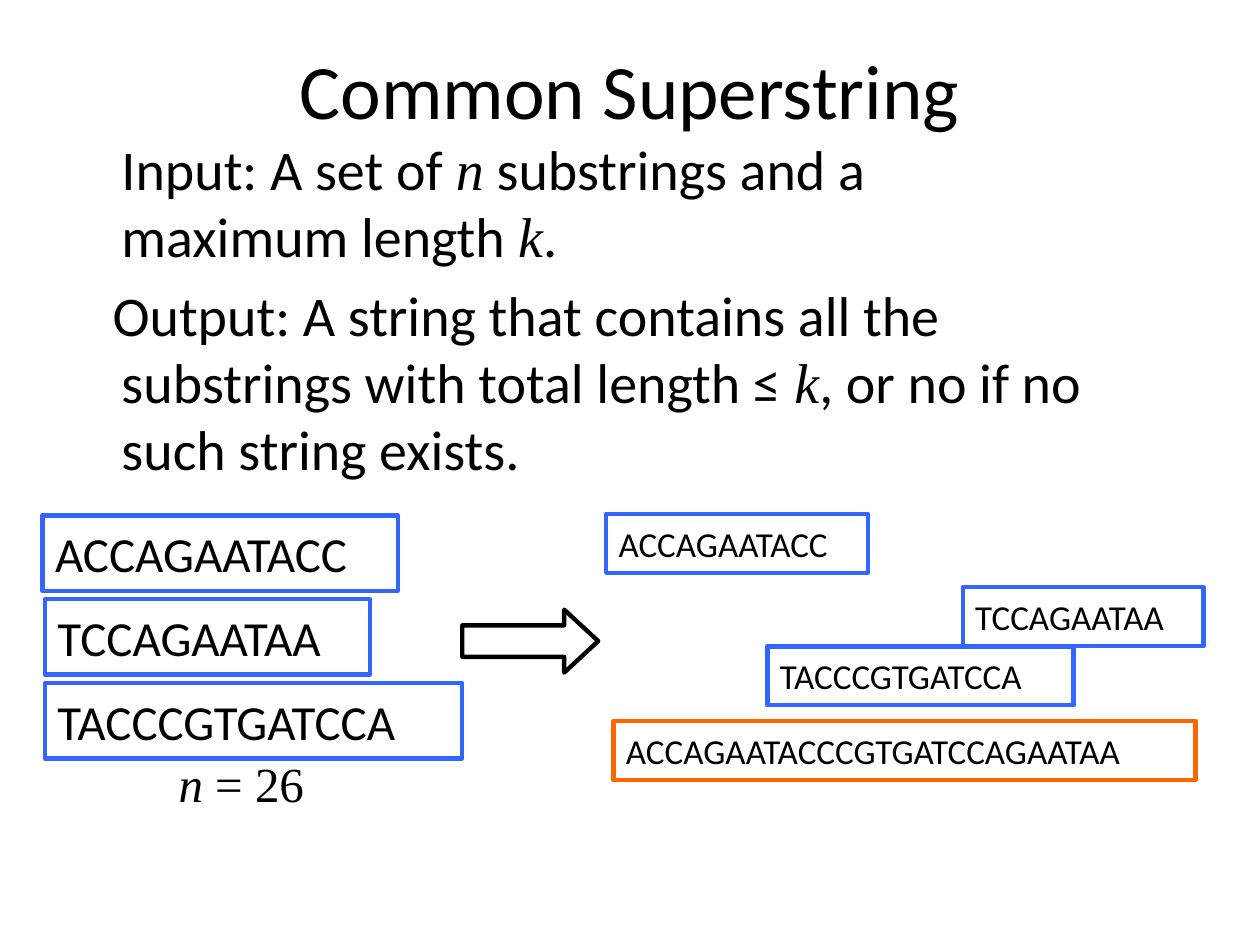
from pptx import Presentation
from pptx.dml.color import RGBColor
from pptx.enum.shapes import MSO_SHAPE
from pptx.enum.text import MSO_ANCHOR, PP_ALIGN
from pptx.util import Cm, Pt

RECTANGLE = MSO_SHAPE.RECTANGLE
RIGHT_ARROW = MSO_SHAPE.RIGHT_ARROW
TOP = MSO_ANCHOR.TOP
MIDDLE = MSO_ANCHOR.MIDDLE
LEFT = PP_ALIGN.LEFT
CENTER = PP_ALIGN.CENTER

BLACK = RGBColor(0x00, 0x00, 0x00)
BLUE = RGBColor(0x33, 0x66, 0xFF)
ORANGE = RGBColor(0xFF, 0x66, 0x00)
SANS = "Calibri"
SERIF = "Times New Roman"


def style_paragraph(paragraph, size, font_name=SANS, alignment=LEFT):
    paragraph.alignment = alignment
    paragraph.font.size = Pt(size)
    paragraph.font.name = font_name
    paragraph.font.color.rgb = BLACK


def add_text_frame(slide, left, top, width, height, anchor=TOP):
    text_box = slide.shapes.add_textbox(Cm(left), Cm(top), Cm(width), Cm(height))
    text_frame = text_box.text_frame
    text_frame.word_wrap = True
    text_frame.vertical_anchor = anchor
    return text_frame


def add_outline(slide, kind, left, top, width, height, color):
    shape = slide.shapes.add_shape(kind, Cm(left), Cm(top), Cm(width), Cm(height))
    shape.shadow.inherit = False
    shape.fill.background()
    shape.line.color.rgb = color
    shape.line.width = Pt(2.5)
    return shape


def add_string_box(slide, string, left, top, width, height, size, color=BLUE):
    shape = add_outline(slide, RECTANGLE, left, top, width, height, color)
    shape.text_frame.word_wrap = True
    paragraph = shape.text_frame.paragraphs[0]
    paragraph.text = string
    style_paragraph(paragraph, size)


def add_variable(paragraph, name):
    run = paragraph.add_run()
    run.text = name
    run.font.name = SERIF
    run.font.italic = True


def add_title(slide, left, top, width, height):
    text_frame = add_text_frame(slide, left, top, width, height, MIDDLE)
    paragraph = text_frame.paragraphs[0]
    paragraph.text = "Common Superstring"
    style_paragraph(paragraph, 44, alignment=CENTER)


def add_problem(slide, left, top, width, height):
    text_frame = add_text_frame(slide, left, top, width, height)
    input_paragraph = text_frame.paragraphs[0]
    output_paragraph = text_frame.add_paragraph()
    for paragraph, indent in ((input_paragraph, 0), (output_paragraph, -0.18)):
        style_paragraph(paragraph, 32)
        paragraph.space_before = Pt(6.4)
        properties = paragraph._p.get_or_add_pPr()
        properties.set("marL", str(Cm(0.96)))
        properties.set("indent", str(Cm(indent)))

    input_paragraph.add_run().text = "Input: A set of "
    add_variable(input_paragraph, "n")
    input_paragraph.add_run().text = " substrings and a"
    input_paragraph.add_line_break()
    input_paragraph.add_run().text = "maximum length "
    add_variable(input_paragraph, "k")
    input_paragraph.add_run().text = "."

    output_paragraph.add_run().text = (
        "Output: A string that contains all the substrings with total length ≤ "
    )
    add_variable(output_paragraph, "k")
    output_paragraph.add_run().text = ", or no if no such string exists."


def add_substrings(slide, left, top):
    boxes = (
        ("ACCAGAATACC", 0, 7.16),
        ("TCCAGAATAA", 0.05, 6.55),
        ("TACCCGTGATCCA", 0.05, 8.41),
    )
    for row, (string, offset, width) in enumerate(boxes):
        add_string_box(slide, string, left + offset, top + row * 1.69, width, 1.52, 28)

    text_frame = add_text_frame(slide, left + 2.49, top + 4.67, 3.05, 1.45)
    paragraph = text_frame.paragraphs[0]
    style_paragraph(paragraph, 28, SERIF)
    add_variable(paragraph, "n")
    paragraph.add_run().text = " = 26"


def add_arrow(slide, left, top, width, height):
    arrow = add_outline(slide, RIGHT_ARROW, left, top, width, height, BLACK)
    arrow.adjustments[1] = 0.54


def add_superstring(slide, left, top):
    boxes = (
        ("TACCCGTGATCCA", 3.25, 2.67, 6.17, BLUE),
        ("TCCAGAATAA", 7.19, 1.48, 4.85, BLUE),
        ("ACCAGAATACC", 0, 0, 5.28, BLUE),
        ("ACCAGAATACCCGTGATCCAGAATAA", 0.15, 4.17, 11.73, ORANGE),
    )
    for string, x, y, width, color in boxes:
        add_string_box(slide, string, left + x, top + y, width, 1.19, 20, color)


def main():
    presentation = Presentation()
    presentation.slide_width = Cm(25.4)
    presentation.slide_height = Cm(19.05)
    slide = presentation.slides.add_slide(presentation.slide_layouts[6])
    add_title(slide, 1.27, 0.2, 22.86, 3.18)
    add_problem(slide, 1.24, 2.59, 22.86, 7.37)
    add_substrings(slide, 0.86, 10.39)
    add_arrow(slide, 9.32, 12.29, 2.74, 1.27)
    add_superstring(slide, 12.22, 10.36)
    presentation.save("out.pptx")


if __name__ == "__main__":
    main()
